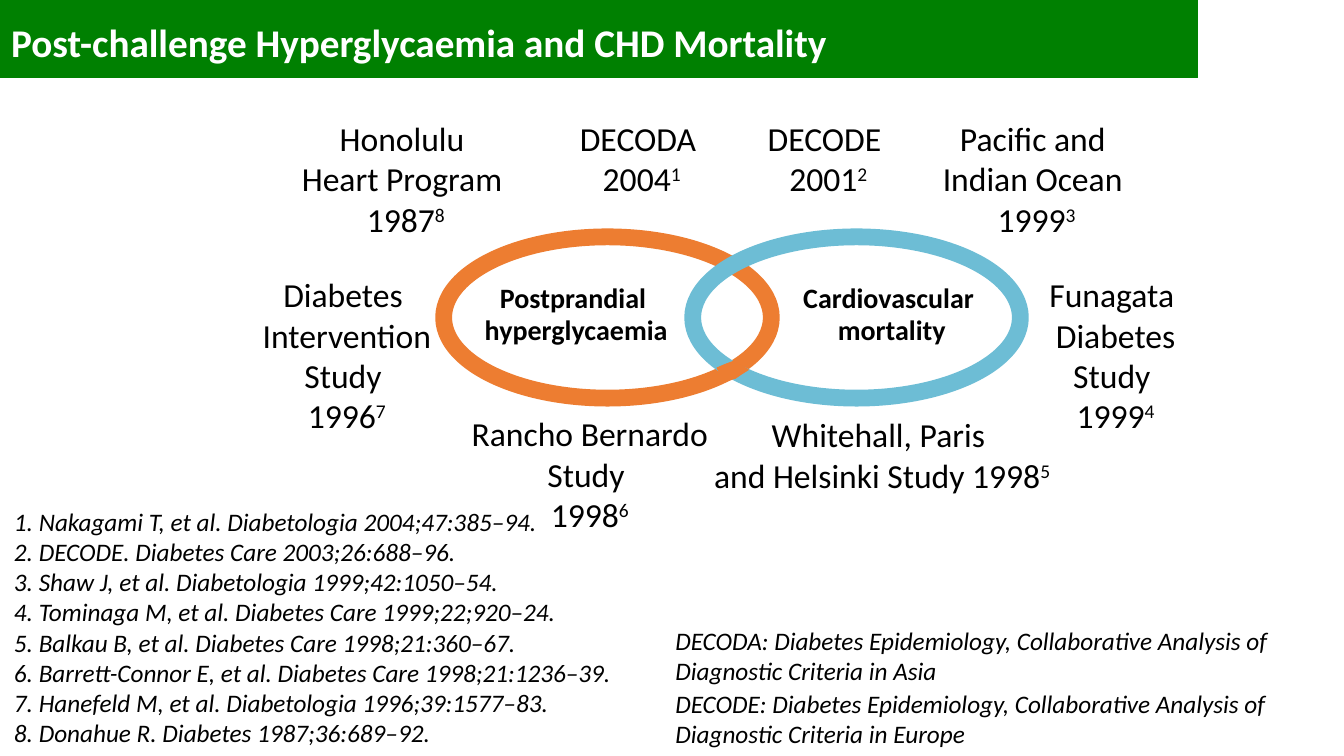
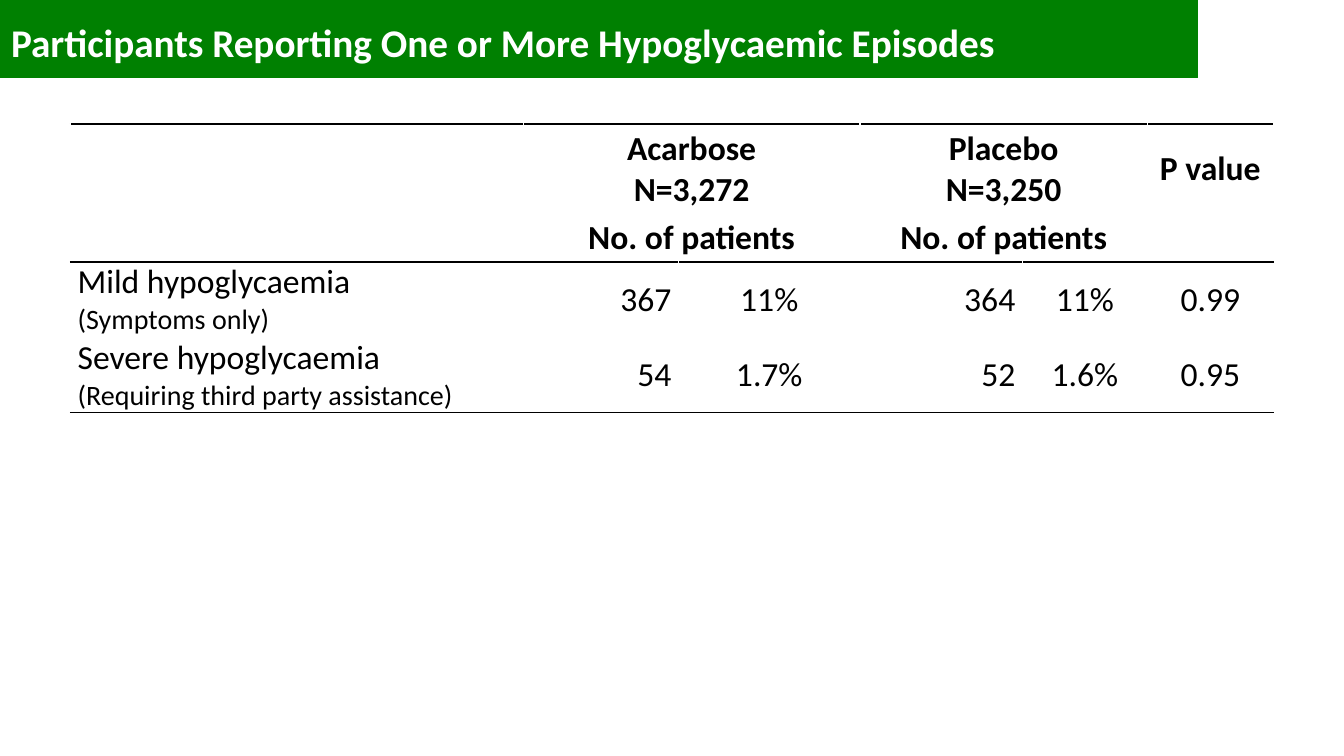
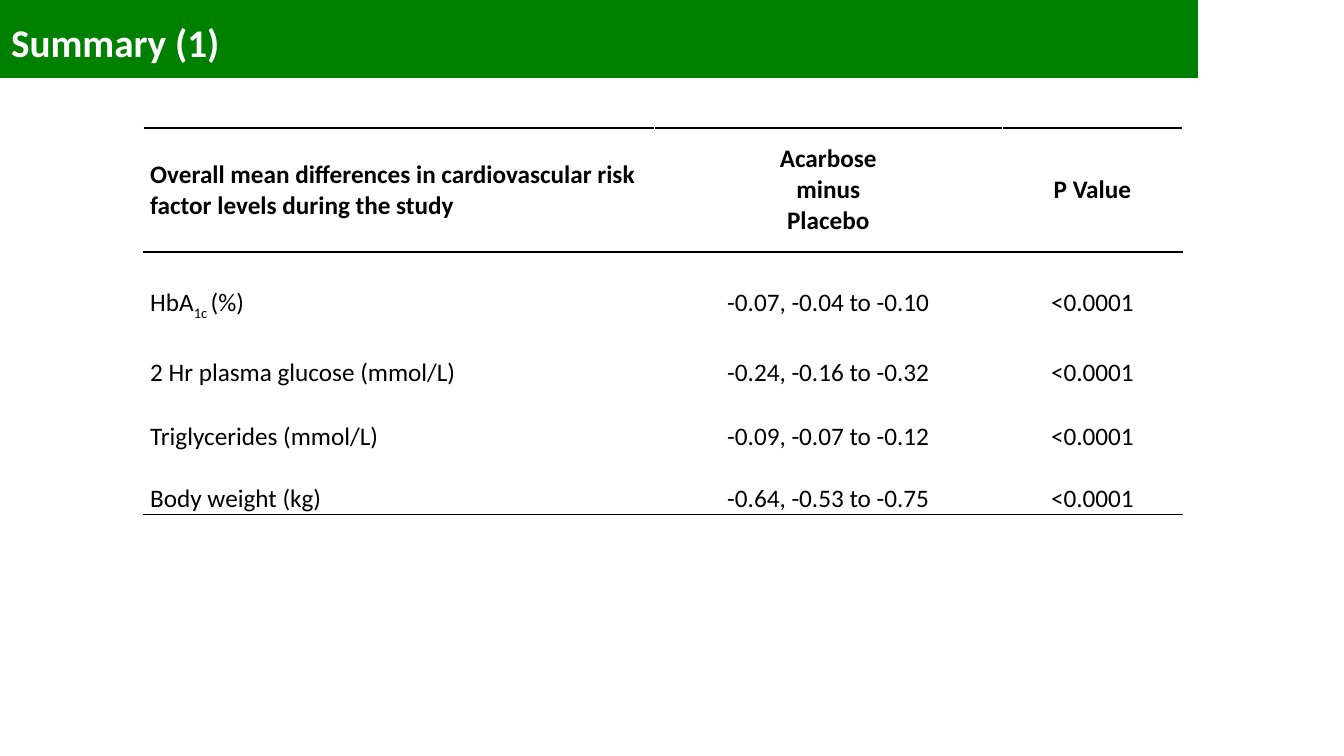
from lxml import etree
from pptx import Presentation
from pptx.dml.color import RGBColor
from pptx.enum.shapes import MSO_SHAPE
from pptx.enum.text import MSO_ANCHOR, MSO_AUTO_SIZE, PP_ALIGN
from pptx.oxml.ns import qn
from pptx.util import Inches, Pt

LEFT, CENTER, RIGHT = PP_ALIGN.LEFT, PP_ALIGN.CENTER, PP_ALIGN.RIGHT
MIDDLE, NO_FIT = MSO_ANCHOR.MIDDLE, MSO_AUTO_SIZE.NONE
RECTANGLE, OVAL = MSO_SHAPE.RECTANGLE, MSO_SHAPE.OVAL

# Shared look
WIDTH, HEIGHT = 13.33, 7.5
FONT = "Calibri"
BLACK, WHITE, GREEN, ORANGE, BLUE = "000000", "FFFFFF", "008001", "ED7D31", "6DBDD5"
BAND_BOX = (0, 0, 11.88, 0.77)
TITLE_BOX = (0.01, 0.13, WIDTH, 0.57)
SUPER, SUB = 30, -25

# Slide 1: each study has its paragraphs, reference number and box
STUDIES = [
    (["Honolulu ", "Heart Program ", "1987"], 8, (2.65, 1.12, 2.75, 1.31)),
    (["DECODA ", "2004"], 1, (5.48, 1.12, 1.77, 0.91)),
    (["DECODE ", "2001"], 2, (7.28, 1.12, 1.87, 0.91)),
    (["Pacific and ", "Indian Ocean ", "1999"], 3, (9.07, 1.12, 2.42, 1.31)),
    (["Funagata ", "Diabetes Study \n1999"], 4, (10.15, 2.67, 1.83, 1.72)),
    (["Whitehall, Paris \nand Helsinki Study 1998"], 5, (6.98, 4.06, 3.54, 1.31)),
    (["Rancho Bernardo Study \n1998"], 6, (4.4, 4.05, 2.9, 1.31)),
    (["Diabetes ", "Intervention Study \n1996"], 7, (2.23, 2.67, 2.42, 1.72)),
]
RING_TOP, RING_WIDTH, RING_HEIGHT = 2.35, 3.25, 1.6
RINGS = [
    (4.4, ORANGE, "Postprandial \nhyperglycaemia", (4.7, 2.76, 2.03, 0.74)),
    (6.87, BLUE, "Cardiovascular \nmortality", (7.86, 2.76, 1.97, 0.74)),
]
OVERLAP = [(7.11, 3.66), (7.19, 3.62), (7.28, 3.58), (7.42, 3.66),
           (7.35, 3.71), (7.3, 3.75), (7.22, 3.78), (7.18, 3.77)]
REFERENCES = [
    "Nakagami T, et al. Diabetologia 2004;47:385–94.",
    "DECODE. Diabetes Care 2003;26:688–96.",
    "Shaw J, et al. Diabetologia 1999;42:1050–54.",
    "Tominaga M, et al. Diabetes Care 1999;22;920–24.",
    "Balkau B, et al. Diabetes Care 1998;21:360–67.",
    "Barrett-Connor E, et al. Diabetes Care 1998;21:1236–39.",
    "Hanefeld M, et al. Diabetologia 1996;39:1577–83.",
    "Donahue R. Diabetes 1987;36:689–92.",
]
ACRONYMS = [
    "DECODA: Diabetes Epidemiology, Collaborative Analysis of Diagnostic Criteria in Asia",
    "DECODE: Diabetes Epidemiology, Collaborative Analysis of Diagnostic Criteria in Europe",
]

# Tables: None continues the cell to its left; rules are the row edges drawn black
EPISODES = {
    "box": (0.7, 1.23), "columns": [4.49, 1.54, 1.8, 1.61, 1.24, 1.25],
    "heights": [0.9, 0.47, 0.47, 0.47], "rules": {0, 2, 4}, "header_rows": 2,
    "aligns": [LEFT, RIGHT, CENTER, RIGHT, CENTER, CENTER],
    "size": 24, "note_size": 20, "spacing": 1,
    "rows": [
        ["", ["Acarbose", "N=3,272"], None, ["Placebo", "N=3,250"], None, "P value"],
        ["", "No. of patients", None, "No. of patients", None, ""],
        [["Mild hypoglycaemia", "(Symptoms only)"], "367", "11%", "364", "11%", "0.99"],
        [["Severe hypoglycaemia", "(Requiring third party assistance)"],
         "54", "1.7%", "52", "1.6%", "0.95"],
    ],
}
SUMMARY = {
    "box": (1.42, 1.27), "columns": [5.07, 3.45, 1.79],
    "heights": [1.23, 0.71, 0.67, 0.52, 0.52], "rules": {0, 1, 5}, "header_rows": 1,
    "aligns": [LEFT, CENTER, CENTER], "size": 18, "note_size": 18, "spacing": 2,
    "rows": [
        ["Overall mean differences in cardiovascular risk factor levels during the study",
         "Acarbose\nminus\nPlacebo", "P Value"],
        [[["HbA", ("1c ", SUB), "(%)"]], "-0.07, -0.04 to -0.10", "<0.0001"],
        ["2 Hr plasma glucose (mmol/L)", "-0.24, -0.16 to -0.32", "<0.0001"],
        ["Triglycerides (mmol/L)", "-0.09, -0.07 to -0.12", "<0.0001"],
        ["Body weight (kg)", "-0.64, -0.53 to -0.75", "<0.0001"],
    ],
}


def color(code):
    return RGBColor.from_string(code)


def inches(values):
    return [Inches(value) for value in values]


def add_span(para, text, size, ink, bold, italic, baseline=0):
    for number, line in enumerate(text.split("\n")):
        if number:
            para.add_line_break()
        span = para.add_run()
        span.text = line
        font = span.font
        font.name, font.size, font.bold, font.italic = FONT, Pt(size), bold, italic
        font.color.rgb = color(ink)
        if baseline:
            span._r.get_or_add_rPr().set("baseline", str(baseline * 1000))


def write(frame, paragraphs, sizes, align=LEFT, ink=BLACK, bold=False, italic=False,
          spacing=None, gap=0):
    """Each paragraph is a string or a list of strings and (text, baseline) pairs."""
    for number, spans in enumerate(paragraphs):
        para = frame.add_paragraph() if number else frame.paragraphs[0]
        para.alignment = align
        if spacing:
            para.line_spacing = spacing
        if number and gap:
            para.space_before = Pt(gap)
        for span in [spans] if isinstance(spans, str) else spans:
            text, baseline = (span, 0) if isinstance(span, str) else span
            add_span(para, text, sizes[min(number, len(sizes) - 1)], ink, bold, italic,
                     baseline)


def add_text(page, box, paragraphs, size, wrap=True, **style):
    frame = page.shapes.add_textbox(*inches(box)).text_frame
    frame.word_wrap = wrap
    frame.auto_size = NO_FIT
    write(frame, paragraphs, [size], **style)


def paint(shape, fill, line, width):
    shape.shadow.inherit = False
    if fill:
        shape.fill.solid()
        shape.fill.fore_color.rgb = color(fill)
    else:
        shape.fill.background()
    shape.line.color.rgb = color(line)
    shape.line.width = Pt(width)


def add_page(deck, layout, title):
    page = deck.slides.add_slide(layout)
    heading = page.shapes.title
    heading.left, heading.top, heading.width, heading.height = inches(TITLE_BOX)
    frame = heading.text_frame
    frame.word_wrap, frame.auto_size, frame.vertical_anchor = True, NO_FIT, MIDDLE
    write(frame, [title], [28], ink=WHITE, bold=True)
    return page


def add_band(page, layout):
    """Draw the band, then move it to the layout that every slide uses."""
    band = page.shapes.add_shape(RECTANGLE, *inches(BAND_BOX))
    paint(band, GREEN, GREEN, 1)
    layout.shapes.element.insert(2, band.element)


def set_borders(cell, top, bottom):
    properties = cell._tc.get_or_add_tcPr()
    for side, ink in zip("LRTB", (WHITE, WHITE, top, bottom)):
        line = etree.SubElement(properties, qn(f"a:ln{side}"), w=str(Pt(1)))
        fill = etree.SubElement(line, qn("a:solidFill"))
        etree.SubElement(fill, qn("a:srgbClr"), val=ink)


def add_data_table(page, data):
    rows, columns, heights = data["rows"], data["columns"], data["heights"]
    box = (*data["box"], sum(columns), sum(heights))
    table = page.shapes.add_table(len(rows), len(columns), *inches(box)).table
    table.first_row = table.horz_banding = False
    for column, width in zip(table.columns, columns):
        column.width = Inches(width)
    for r, row in enumerate(rows):
        table.rows[r].height = Inches(heights[r])
        header = r < data["header_rows"]
        edges = [BLACK if edge in data["rules"] else WHITE for edge in (r, r + 1)]
        for c, content in enumerate(row):
            cell = table.cell(r, c)
            set_borders(cell, *edges)
            cell.fill.solid()
            cell.fill.fore_color.rgb = color(WHITE)
            cell.vertical_anchor = MIDDLE
            cell.margin_left = cell.margin_right = Inches(0.07)
            cell.margin_top = cell.margin_bottom = 0
            if content is None:
                table.cell(r, c - 1).merge(cell)
            elif content:
                paragraphs = [content] if isinstance(content, str) else content
                sizes = [data["size"], data["size" if header else "note_size"]]
                write(cell.text_frame, paragraphs, sizes,
                      align=CENTER if header and c else data["aligns"][c],
                      bold=header, spacing=None if header else data["spacing"])


def draw_studies(page):
    # Linked rings, with the orange one passing over the blue one below
    for left, ink, _, _ in RINGS:
        ring = page.shapes.add_shape(
            OVAL, *inches((left, RING_TOP, RING_WIDTH, RING_HEIGHT)))
        paint(ring, None, ink, 12)
    points = [tuple(inches(point)) for point in OVERLAP]
    builder = page.shapes.build_freeform(*points[0])
    builder.add_line_segments(points[1:], close=True)
    overlap = builder.convert_to_shape()
    overlap.rotation = 3.4
    paint(overlap, ORANGE, ORANGE, 0.75)
    for _, _, label, box in RINGS:
        add_text(page, box, [label], 20, wrap=False, align=CENTER, bold=True, spacing=0.95)

    # Studies around the rings
    for lines, reference, box in STUDIES:
        paragraphs = [*lines[:-1], [lines[-1], (str(reference), SUPER)]]
        add_text(page, box, paragraphs, 24, align=CENTER)

    # References and acronyms
    numbered = [f"{number}. {text}" for number, text in enumerate(REFERENCES, 1)]
    add_text(page, (0.04, 4.97, 6.91, 2.52), numbered, 18, italic=True)
    add_text(page, (6.6, 6.15, 6.71, 1.34), ACRONYMS, 18, italic=True, gap=2)


def main():
    deck = Presentation()
    deck.slide_width, deck.slide_height = inches((WIDTH, HEIGHT))
    layout = deck.slide_layouts.get_by_name("Title Only")

    page = add_page(deck, layout, "Post-challenge Hyperglycaemia and CHD Mortality")
    add_band(page, layout)
    draw_studies(page)

    page = add_page(deck, layout, "Participants Reporting One or More Hypoglycaemic Episodes")
    add_data_table(page, EPISODES)

    page = add_page(deck, layout, "Summary (1)")
    add_data_table(page, SUMMARY)
    deck.save("out.pptx")


if __name__ == "__main__":
    main()
